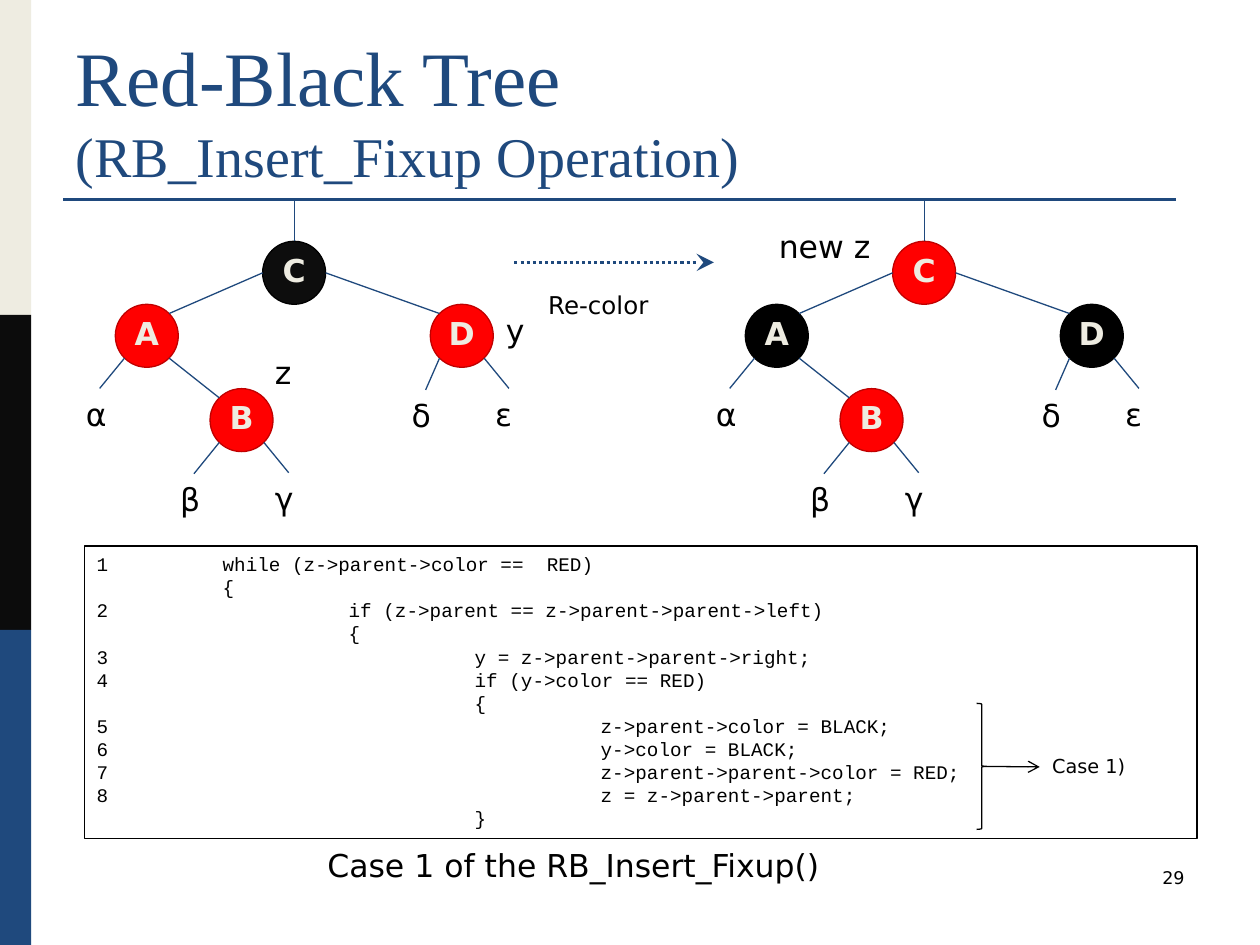
from lxml import etree
from pptx import Presentation
from pptx import util as u
from pptx.dml.color import RGBColor
from pptx.enum import dml, shapes, text
from pptx.oxml import ns

COLORS = {
    "blue": "1F497D", "cream": "EEECE1", "dark": "0C0C0C", "root": "0D0D0D",
    "black": "000000", "white": "FFFFFF", "red": "FF0000", "rim": "C00000",
}
SANS, SERIF, MONO = "DejaVu Sans", "Times New Roman", "Courier New"
RADIUS = 0.635
DIAGONAL = 0.45
TREE_SHIFT = 12.7
RULE_Y = 4.02
LEAF_WIDTH = 1.06
TAB_WIDTH = 2.54

NODES = {"C": (5.93, 5.5), "D": (9.31, 6.77), "A": (2.96, 6.77), "B": (4.87, 8.47)}
LEAVES = [
    ("α", "A", -1, 2.01, 7.83),
    ("β", "B", -1, 3.91, 9.55),
    ("γ", "B", 1, 5.82, 9.53),
    ("δ", "D", -1, 8.58, 7.86),
    ("ε", "D", 1, 10.26, 7.83),
]
CODE = [
    "1\twhile (z->parent->color ==  RED)",
    "\t{",
    "2\t\tif (z->parent == z->parent->parent->left)",
    "\t\t{",
    "3\t\t\ty = z->parent->parent->right;",
    "4\t\t\tif (y->color == RED)",
    "\t\t\t{",
    "5\t\t\t\tz->parent->color = BLACK;",
    "6\t\t\t\ty->color = BLACK;",
    "7\t\t\t\tz->parent->parent->color = RED;",
    "8\t\t\t\tz = z->parent->parent;",
    "\t\t\t}",
]


def rgb(name):
    return RGBColor.from_string(COLORS[name])


def style_span(span, size, font=SANS, color="black", bold=False):
    span.font.size = u.Pt(size)
    span.font.name = font
    span.font.color.rgb = rgb(color)
    span.font.bold = bold


def add_shape(page, kind, left, top, width, height, fill=None, line=None):
    shape = page.shapes.add_shape(kind, u.Cm(left), u.Cm(top), u.Cm(width), u.Cm(height))
    shape.shadow.inherit = False
    if fill:
        shape.fill.solid()
        shape.fill.fore_color.rgb = rgb(fill)
    else:
        shape.fill.background()
    if line:
        shape.line.color.rgb = rgb(line)
        shape.line.width = u.Pt(0.75)
    else:
        shape.line.fill.background()
    return shape


def add_line(page, start, end, color="blue", width=0.75, dash=None, arrow=None, head="med"):
    points = [u.Cm(value) for value in (*start, *end)]
    line = page.shapes.add_connector(shapes.MSO_CONNECTOR.STRAIGHT, *points)
    line.line.color.rgb = rgb(color)
    line.line.width = u.Pt(width)
    if dash:
        line.line.dash_style = dash
    if arrow:
        outline = line._element.spPr.find(ns.qn("a:ln"))
        etree.SubElement(outline, ns.qn("a:tailEnd"), type=arrow, w=head, len=head)
    etree.SubElement(line._element.spPr, ns.qn("a:effectLst"))


def add_label(page, words, left, top, width, height=1.02, size=18, align=None):
    box = page.shapes.add_textbox(u.Cm(left), u.Cm(top), u.Cm(width), u.Cm(height))
    box.text_frame.word_wrap = True
    para = box.text_frame.paragraphs[0]
    para.text = words
    para.alignment = align
    for span in para.runs:
        style_span(span, size)
    return box


def add_title(page):
    box = add_label(page, "Red-Black Tree\v(RB_Insert_Fixup Operation)", 1.27, 0.76, 22.86, 3.18)
    box.text_frame.vertical_anchor = text.MSO_ANCHOR.BOTTOM
    for span, size in zip(box.text_frame.paragraphs[0].runs, (44, 32)):
        style_span(span, size, SERIF, "blue")


def add_node(page, name, x, y, fill):
    line = "rim" if fill == "red" else "black"
    node = add_shape(page, shapes.MSO_SHAPE.OVAL, x - RADIUS, y - RADIUS,
                     2 * RADIUS, 2 * RADIUS, fill, line)
    frame = node.text_frame
    frame.margin_left = frame.margin_right = frame.margin_top = 0
    frame.margin_bottom = u.Cm(0.13)
    frame.vertical_anchor = text.MSO_ANCHOR.MIDDLE
    frame.text = name
    para = frame.paragraphs[0]
    para.alignment = text.PP_ALIGN.CENTER
    style_span(para.runs[0], 18, color="cream", bold=True)


def add_tree(page, shift, fills):
    centers = {name: (x + shift, y) for name, (x, y) in NODES.items()}

    def corner(name, across, down):
        x, y = centers[name]
        return x + across * DIAGONAL, y + down * DIAGONAL

    for name, (x, y) in centers.items():
        add_node(page, name, x, y, fills[name])
    root_x, root_y = centers["C"]
    add_line(page, (root_x, root_y - RADIUS), (root_x, RULE_Y))
    for child, side in (("A", -1), ("D", 1)):
        add_line(page, (root_x + side * RADIUS, root_y), corner(child, -side, -1))
    add_line(page, corner("A", 1, 1), corner("B", -1, -1))
    for letter, parent, side, x, top in LEAVES:
        add_line(page, corner(parent, side, 1), (x + shift, top))
        add_label(page, letter, x + shift - LEAF_WIDTH / 2, top, LEAF_WIDTH)


def set_tabs(para, count):
    stops = etree.SubElement(para._p.get_or_add_pPr(), ns.qn("a:tabLst"))
    for number in range(1, count + 1):
        etree.SubElement(stops, ns.qn("a:tab"), pos=str(u.Cm(TAB_WIDTH * number)), algn="l")


def add_code(page):
    box = add_shape(page, shapes.MSO_SHAPE.RECTANGLE, 1.7, 11.01, 22.43, 5.89, "white", "black")
    frame = box.text_frame
    frame.word_wrap = True
    frame.vertical_anchor = text.MSO_ANCHOR.TOP
    frame.text = "\n".join(CODE)
    for para in frame.paragraphs:
        para.alignment = text.PP_ALIGN.LEFT
        para.line_spacing = u.Pt(13.2)
        set_tabs(para, 4)
        for span in para.runs:
            style_span(span, 11, MONO)


def main():
    deck = Presentation()
    deck.slide_width, deck.slide_height = u.Cm(25.4), u.Cm(19.05)
    page = deck.slides.add_slide(deck.slide_layouts[6])

    for row, color in enumerate(("cream", "dark", "blue")):
        add_shape(page, shapes.MSO_SHAPE.RECTANGLE, 0, row * 6.35, 0.63, 6.35, color)
    add_line(page, (1.27, RULE_Y), (23.7, RULE_Y), width=1.5)
    add_title(page)
    add_label(page, "29", 18.2, 17.36, 5.93, 1.27, 10, text.PP_ALIGN.RIGHT)

    add_tree(page, 0, {"C": "root", "D": "red", "A": "red", "B": "red"})
    add_tree(page, TREE_SHIFT, {"C": "red", "D": "black", "A": "black", "B": "red"})
    add_line(page, (10.37, 5.29), (14.39, 5.29), width=1.75,
             dash=dml.MSO_LINE.ROUND_DOT, arrow="stealth", head="lg")
    add_label(page, "Re-color", 10.8, 5.72, 2.97, 0.86, 14)
    add_label(page, "z", 5.29, 6.99, 1.27)
    add_label(page, "y", 9.95, 6.14, 1.06)
    add_label(page, "new z", 15.45, 4.45, 2.54)

    add_code(page)
    add_shape(page, shapes.MSO_SHAPE.RIGHT_BRACE, 19.69, 14.18, 0.2, 2.54, line="black")
    add_line(page, (19.89, 15.45), (20.96, 15.46), "black", arrow="arrow")
    add_label(page, "Case 1)", 20.96, 15.09, 2.33, 0.73, 11)
    add_label(page, "Case 1 of the RB_Insert_Fixup()", 6.35, 16.93, 13.76)

    deck.save("out.pptx")


if __name__ == "__main__":
    main()
